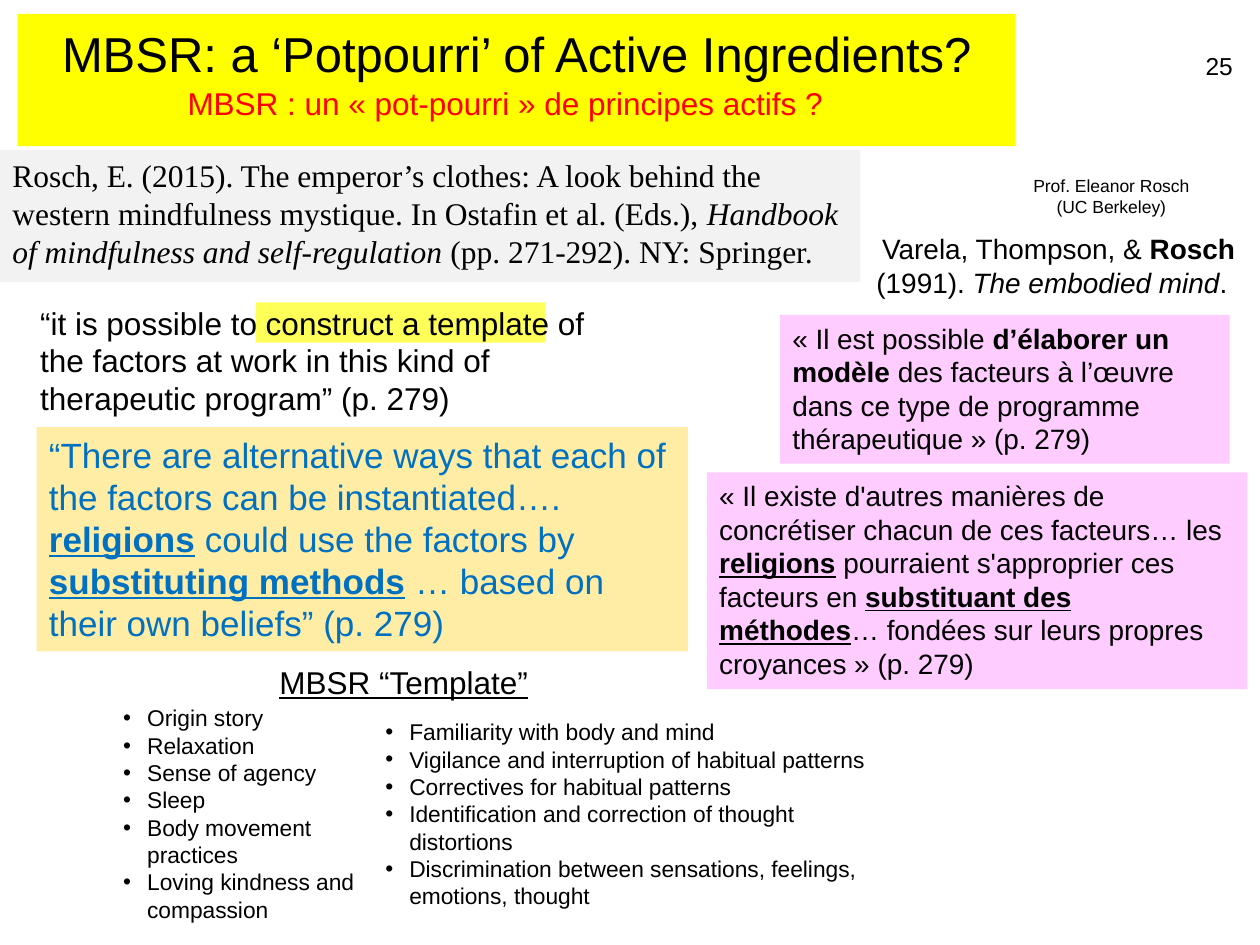
import pptx
import pptx.dml.color
import pptx.enum.shapes
import pptx.enum.text
import pptx.oxml.ns
import pptx.util
from lxml import etree

THEME = {
    "black": "000000", "red": "FF0000", "blue": "0070C0",
    "yellow": "FFFF00", "amber": "FFCC00", "grey": "F2F2F2", "pink": "FFCCFF",
    "sans": "Arial", "serif": "Times New Roman",
    "title": 28, "quote": 20, "body": 18, "translation": 16,
    "number": 14, "list": 13, "caption": 10,
}
LEFT, CENTER, RIGHT = (pptx.enum.text.PP_ALIGN.LEFT, pptx.enum.text.PP_ALIGN.CENTER,
                       pptx.enum.text.PP_ALIGN.RIGHT)
BULLET_INDENT = pptx.util.Inches(0.19)

presentation = pptx.Presentation()
presentation.slide_width = pptx.util.Inches(10)
presentation.slide_height = pptx.util.Inches(7.5)
slide = presentation.slides.add_slide(presentation.slide_layouts[6])


def add_panel(area, fill=None, opacity=100):
    """Add a text box, or a filled rectangle; area is in percent of the slide."""
    left, top, width, height = (
        int(share / 100 * side) for share, side in
        zip(area, (presentation.slide_width, presentation.slide_height) * 2))
    if fill is None:
        return slide.shapes.add_textbox(left, top, width, height)
    shape = slide.shapes.add_shape(
        pptx.enum.shapes.MSO_SHAPE.RECTANGLE, left, top, width, height)
    shape.shadow.inherit = False
    shape.line.fill.background()
    shape.fill.solid()
    shape.fill.fore_color.rgb = pptx.dml.color.RGBColor.from_string(THEME[fill])
    if opacity < 100:
        color = shape.fill._xPr.find(".//" + pptx.oxml.ns.qn("a:srgbClr"))
        etree.SubElement(color, pptx.oxml.ns.qn("a:alpha"), val=str(opacity * 1000))
    return shape


def write(shape, paragraphs, size, color="black", font="sans", align=LEFT, bullets=False):
    """Write paragraphs, each a list of (text, style); style letters are b, i, u."""
    frame = shape.text_frame
    frame.word_wrap = True
    frame.vertical_anchor = pptx.enum.text.MSO_ANCHOR.TOP
    for index, runs in enumerate(paragraphs):
        paragraph = frame.add_paragraph() if index else frame.paragraphs[0]
        paragraph.alignment = align
        if bullets:
            properties = paragraph._p.get_or_add_pPr()
            properties.set("marL", str(BULLET_INDENT))
            properties.set("indent", str(-BULLET_INDENT))
            etree.SubElement(properties, pptx.oxml.ns.qn("a:buFont"), typeface=THEME["sans"])
            etree.SubElement(properties, pptx.oxml.ns.qn("a:buChar"), char="•")
        paragraph.font.name = THEME[font]
        paragraph.font.size = pptx.util.Pt(THEME[size])
        paragraph.font.color.rgb = pptx.dml.color.RGBColor.from_string(THEME[color])
        for text, style in runs:
            run = paragraph.add_run()
            run.text = text
            if "b" in style:
                run.font.bold = True
            if "i" in style:
                run.font.italic = True
            if "u" in style:
                run.font.underline = True
    return frame


# Title band, slide number and portrait caption
title = write(add_panel((1.4, 1.47, 79.2, 14), "yellow"),
              [[("MBSR: a ‘Potpourri’ of Active Ingredients?", "")]], "title", align=CENTER)
title.margin_top = pptx.util.Inches(0.08)
write(add_panel((94.7, 4.8, 4.3, 6.93)), [[("25", "")]], "number")
write(add_panel((80.7, 17.87, 15, 5.87)),
      [[("Prof. Eleanor Rosch (UC Berkeley)", "")]], "caption", align=CENTER)

# Template heading and its two bullet lists
heading = write(add_panel((21.2, 69.47, 22.6, 5.33)), [[("MBSR “Template”", "u")]], "body")
heading.word_wrap = False
template_lists = [
    ((8.8, 73.87, 22.6, 24.67), [
        "Origin story", "Relaxation", "Sense of agency", "Sleep",
        "Body movement practices", "Loving kindness and compassion"]),
    ((29.6, 75.33, 40.9, 21.73), [
        "Familiarity with body and mind",
        "Vigilance and interruption of habitual patterns",
        "Correctives for habitual patterns",
        "Identification and correction of thought distortions",
        "Discrimination between sensations, feelings, emotions, thought"]),
]
for area, items in template_lists:
    write(add_panel(area), [[(item, "")] for item in items], "list", bullets=True)

# English quotes and their reference
write(add_panel((2.9, 45.2, 51.7, 23.73), "amber", 35), [[
    ("“There are alternative ways that each of the factors can be instantiated…. ", ""),
    ("religions", "bu"), (" could use the factors by ", ""),
    ("substituting methods", "bu"),
    (" … based on their own beliefs” (p. 279)", "")]], "quote", "blue")
write(add_panel((0, 15.87, 68.3, 14), "grey"), [[
    ("Rosch, E. (2015). The emperor’s clothes: A look behind the western mindfulness "
     "mystique. In Ostafin et al. (Eds.), ", ""),
    ("Handbook of mindfulness and self-regulation", "i"),
    (" (pp. 271-292). NY: Springer.", "")]], "body", font="serif")
add_panel((20.3, 32, 23, 4.27), "yellow", 65)
write(add_panel((2.2, 31.47, 47.3, 15.87)), [[
    ("“it is possible to construct a template of the factors at work in this kind of "
     "therapeutic program” (p. 279)", "")]], "body")

# French subtitle and book reference
write(add_panel((-1.5, 8.27, 83.2, 5.33)),
      [[("MBSR : un « pot-pourri » de principes actifs ?", "")]], "body", "red", align=CENTER)
write(add_panel((66.9, 23.87, 32.1, 8.53)), [[
    ("Varela, Thompson, & ", ""), ("Rosch", "b"), (" (1991). ", ""),
    ("The embodied mind", "i"), (". ", "")]], "translation", align=RIGHT)

# French translations of the quotes
translations = [
    ((61.9, 33.33, 35.7, 15.73), [
        ("« Il est possible ", ""), ("d’élaborer un modèle", "b"),
        (" des facteurs à l’œuvre dans ce type de programme thérapeutique » (p. 279)", "")]),
    ((56.1, 50, 42.9, 22.93), [
        ("« Il existe d'autres manières de concrétiser chacun de ces facteurs… les ", ""),
        ("religions", "bu"), (" pourraient s'approprier ces facteurs en ", ""),
        ("substituant des méthodes", "bu"),
        ("… fondées sur leurs propres croyances » (p. 279)", "")]),
]
for area, runs in translations:
    write(add_panel(area, "pink"), [runs], "translation")

presentation.save("out.pptx")
